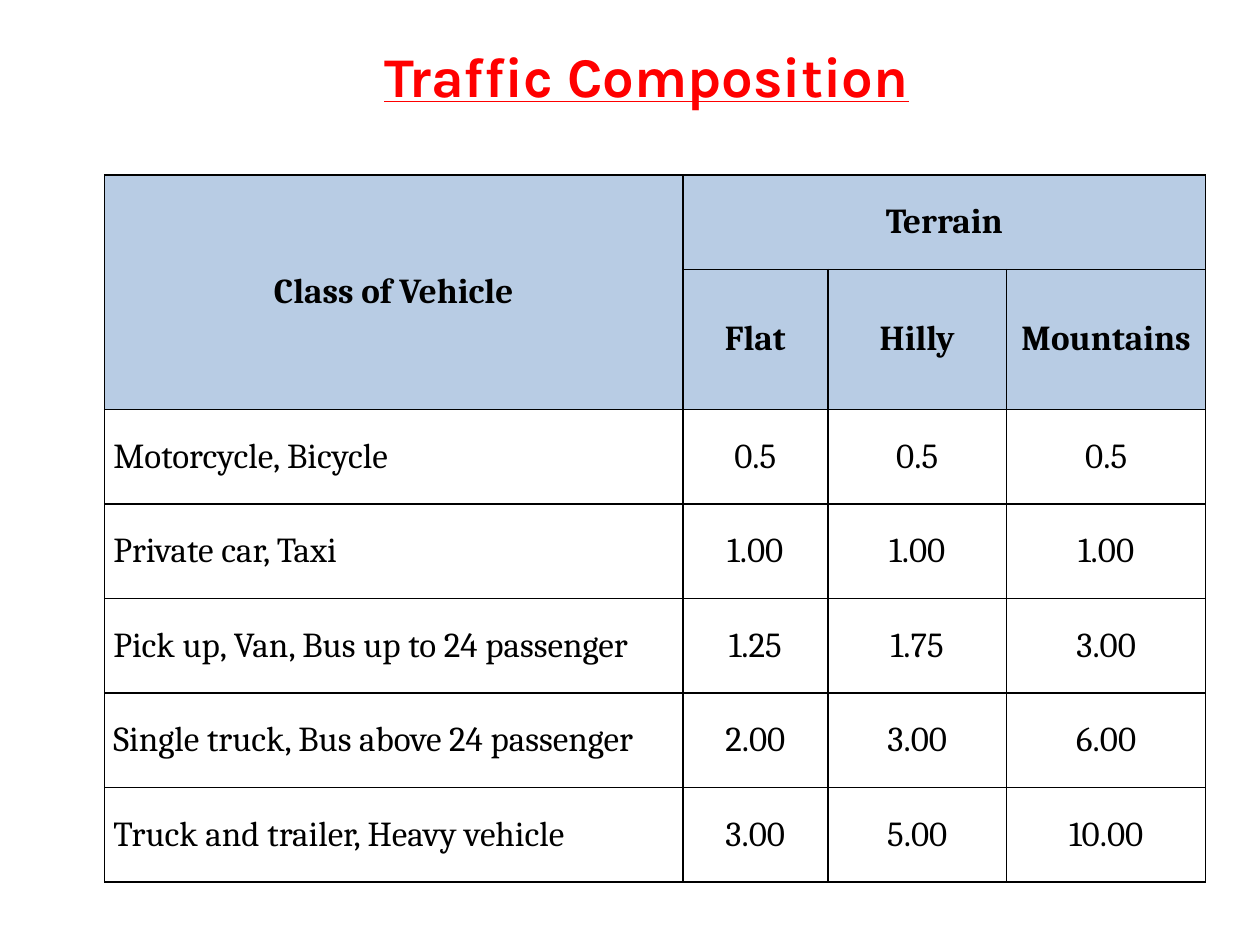
"""Build the traffic composition slide with its table of vehicle factors by terrain."""
import pptx
import pptx.util
import pptx.dml.color
import pptx.enum.text
import pptx.oxml
import pptx.oxml.ns

Inches, Pt = pptx.util.Inches, pptx.util.Pt
PP_ALIGN = pptx.enum.text.PP_ALIGN
MIDDLE = pptx.enum.text.MSO_ANCHOR.MIDDLE
COLORS = {"title": "FF0000", "text": "000000", "header": "B8CCE4", "border": "000000"}
COL_WIDTHS = [4.59, 1.15, 1.42, 1.58]
ROW_HEIGHTS = [0.75, 1.11] + [0.75] * 5
HEADER_ROWS = 2
ROWS = [
    ["Class of Vehicle", "Terrain", "", ""],
    ["", "Flat", "Hilly", "Mountains"],
    ["Motorcycle, Bicycle", "0.5", "0.5", "0.5"],
    ["Private car, Taxi", "1.00", "1.00", "1.00"],
    ["Pick up, Van, Bus up to 24 passenger", "1.25", "1.75", "3.00"],
    ["Single truck, Bus above 24 passenger", "2.00", "3.00", "6.00"],
    ["Truck and trailer, Heavy vehicle", "3.00", "5.00", "10.00"],
]


def add_run(p, text, font, size, color, bold):
    r = p.add_run()
    r.text = text
    r.font.name = font
    r.font.size = Pt(size)
    r.font.bold = bold
    r.font.color.rgb = pptx.dml.color.RGBColor.from_string(COLORS[color])
    return r


def set_borders(cell):
    tc_pr = cell._tc.get_or_add_tcPr()
    for side in ("lnL", "lnR", "lnT", "lnB"):
        tc_pr.append(pptx.oxml.parse_xml(
            f'<a:{side} {pptx.oxml.ns.nsdecls("a")} w="{Pt(1)}"><a:solidFill>'
            f'<a:srgbClr val="{COLORS["border"]}"/></a:solidFill></a:{side}>'))


prs = pptx.Presentation()
prs.slide_width, prs.slide_height = Inches(10), Inches(7.5)
s = prs.slides.add_slide(prs.slide_layouts[5])

title = s.shapes.title
title.left, title.top = Inches(2.95), Inches(0.28)
title.width, title.height = Inches(4.76), Inches(0.64)
tf = title.text_frame
tf.word_wrap = True
tf.auto_size = pptx.enum.text.MSO_AUTO_SIZE.NONE
tf.vertical_anchor = MIDDLE
p = tf.paragraphs[0]
p.alignment = PP_ALIGN.LEFT
r = add_run(p, "Traffic Composition", "Karla", 32, "title", True)
r.font.underline = True

table = s.shapes.add_table(
    len(ROWS), len(COL_WIDTHS), Inches(0.83), Inches(1.39),
    Inches(sum(COL_WIDTHS)), Inches(sum(ROW_HEIGHTS))).table
table.first_row = False
table.horz_banding = False
for column, width in zip(table.columns, COL_WIDTHS):
    column.width = Inches(width)
for row, height in zip(table.rows, ROW_HEIGHTS):
    row.height = Inches(height)
table.cell(0, 0).merge(table.cell(1, 0))
table.cell(0, 1).merge(table.cell(0, 3))

for i, values in enumerate(ROWS):
    header = i < HEADER_ROWS
    for j, text in enumerate(values):
        cell = table.cell(i, j)
        cell.margin_left = cell.margin_right = Inches(0.07)
        cell.margin_top = cell.margin_bottom = 0
        cell.vertical_anchor = MIDDLE
        set_borders(cell)
        if header:
            cell.fill.solid()
            cell.fill.fore_color.rgb = pptx.dml.color.RGBColor.from_string(COLORS["header"])
        else:
            cell.fill.background()
        if text:
            p = cell.text_frame.paragraphs[0]
            p.alignment = PP_ALIGN.CENTER if header or j else PP_ALIGN.LEFT
            add_run(p, text, "Cambria", 20, "text", header)

prs.save("out.pptx")
